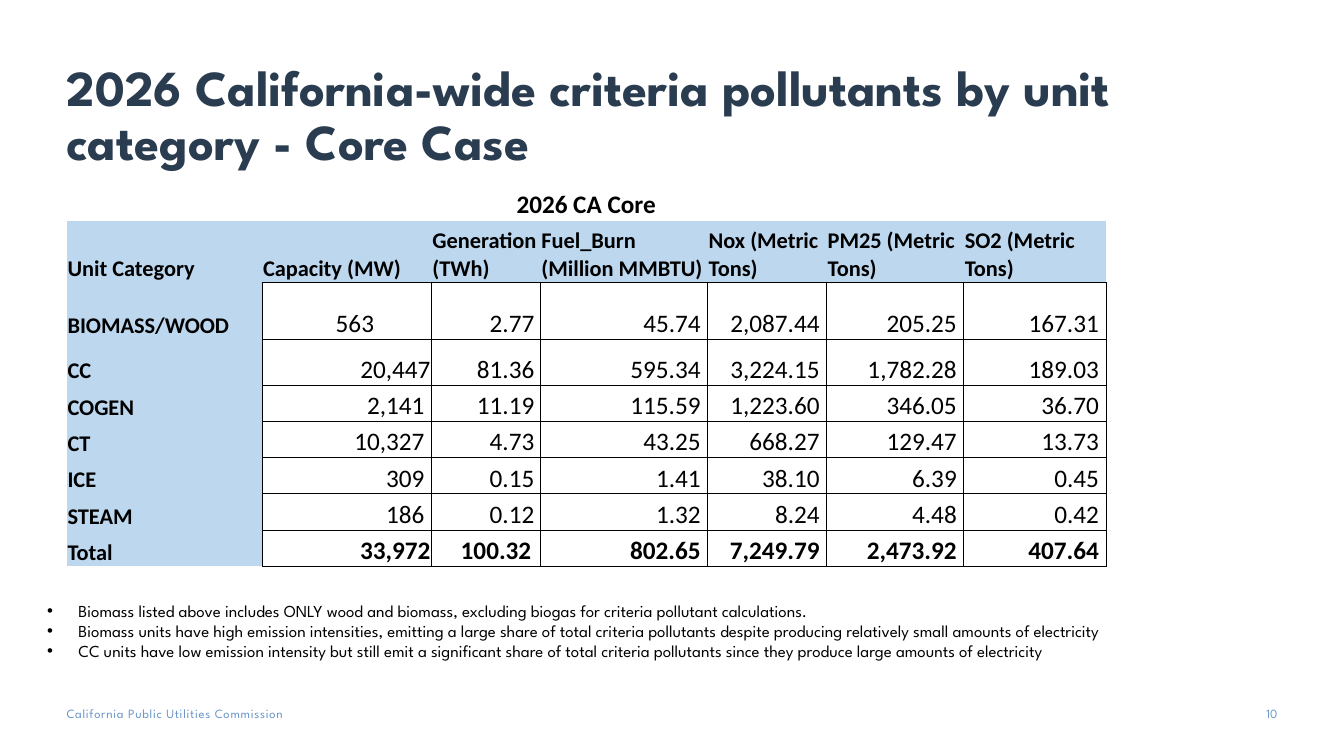
"""Build the slide on 2026 California-wide criteria pollutants by unit category."""
from dataclasses import dataclass

from lxml.etree import SubElement
from pptx import Presentation
from pptx.dml.color import RGBColor as Rgb
from pptx.enum.text import MSO_ANCHOR as Anchor, PP_ALIGN as Align
from pptx.oxml.ns import qn
from pptx.util import Inches, Pt

COLOURS = {"navy": "2A3C50", "steel": "6996C9", "black": "000000", "pale": "BDD7EE"}
HEADING_FONT, TABLE_FONT = "League Spartan", "Calibri"
COLUMN_WIDTHS = (1.94, 1.68, 1.08, 1.66, 1.18, 1.36, 1.41)
ROW_HEIGHTS = (0.34, 0.61, 0.57, 0.45) + (0.36,) * 5
EDGES = ("L", "R", "T", "B")
NUMBER_GAP = 0.07


@dataclass(frozen=True)
class Style:
    size: float
    colour: str = "black"
    font: str = HEADING_FONT
    bold: bool = False
    tracking: int = 0


@dataclass(frozen=True)
class TextBlock:
    left: float
    top: float
    width: float
    height: float
    lines: tuple[str, ...]
    style: Style
    insets: tuple[float, float, float, float] = (0, 0, 0, 0)
    align: Align = Align.LEFT
    anchor: Anchor = Anchor.TOP
    line_spacing: float = 1.0
    bulleted: bool = False


@dataclass(frozen=True)
class UnitRow:
    category: str
    values: tuple[str, ...]
    capacity_gap: float = NUMBER_GAP
    generation_gap: float = 0.06
    bold: bool = False


@dataclass(frozen=True)
class CellLook:
    style: Style
    align: Align = Align.LEFT
    gap: float = 0.01
    line_spacing: float = 1.0
    filled: bool = False
    edges: tuple[str, ...] = ()


BLOCKS = (
    TextBlock(0.66, 0.44, 12.01, 1.31,
              ("2026 California-wide criteria pollutants by unit category - Core Case",),
              Style(36, "navy", bold=True), (0, 0.05, 0.1, 0.05),
              anchor=Anchor.BOTTOM, line_spacing=0.9),
    TextBlock(0.37, 5.91, 12.01, 0.91, (
        "Biomass listed above includes ONLY wood and biomass, excluding biogas for criteria "
        "pollutant calculations.",
        "Biomass units have high emission intensities, emitting a large share of total criteria "
        "pollutants despite producing relatively small amounts of electricity",
        "CC units have low emission intensity but still emit a significant share of total criteria "
        "pollutants since they produce large amounts of electricity",
    ), Style(12), (0.1, 0.05, 0.1, 0.05), bulleted=True),
    TextBlock(0.66, 7, 3.21, 0.15, ("California Public Utilities Commission",),
              Style(9, "steel", tracking=50)),
    TextBlock(12.25, 7, 0.42, 0.2, ("10",), Style(9, "steel"), align=Align.RIGHT),
)

HEADERS = ("Unit Category", "Capacity (MW)", "Generation (TWh)", "Fuel_Burn (Million MMBTU)",
           "Nox (Metric Tons)", "PM25 (Metric Tons)", "SO2 (Metric Tons)")
UNITS = (
    UnitRow("BIOMASS/WOOD", ("563", "2.77", "45.74", "2,087.44", "205.25", "167.31"),
            capacity_gap=0.57),
    UnitRow("CC", ("20,447", "81.36", "595.34", "3,224.15", "1,782.28", "189.03"),
            capacity_gap=0.01),
    UnitRow("COGEN", ("2,141", "11.19", "115.59", "1,223.60", "346.05", "36.70")),
    UnitRow("CT", ("10,327", "4.73", "43.25", "668.27", "129.47", "13.73")),
    UnitRow("ICE", ("309", "0.15", "1.41", "38.10", "6.39", "0.45")),
    UnitRow("STEAM", ("186", "0.12", "1.32", "8.24", "4.48", "0.42")),
    UnitRow("Total", ("33,972", "100.32", "802.65", "7,249.79", "2,473.92", "407.64"),
            capacity_gap=0.01, generation_gap=0.09, bold=True),
)


def add_text(paragraph, text: str, style: Style) -> None:
    """Add one styled run to a paragraph."""
    run = paragraph.add_run()
    run.text = text
    run.font.size = Pt(style.size)
    run.font.name = style.font
    run.font.bold = style.bold
    run.font.color.rgb = Rgb.from_string(COLOURS[style.colour])
    if style.tracking:
        run.font._element.set("spc", str(style.tracking))


def add_bullet(paragraph) -> None:
    """Give a paragraph a hanging bullet."""
    properties = paragraph._p.get_or_add_pPr()
    properties.set("marL", str(Inches(0.31)))
    properties.set("indent", str(-Inches(0.31)))
    SubElement(properties, qn("a:buFont")).set("typeface", "Arial")
    SubElement(properties, qn("a:buChar")).set("char", "•")


def draw_block(slide, block: TextBlock) -> None:
    """Draw a text block with one paragraph for each line."""
    frame = slide.shapes.add_textbox(Inches(block.left), Inches(block.top),
                                     Inches(block.width), Inches(block.height)).text_frame
    frame.word_wrap = True
    frame.vertical_anchor = block.anchor
    (frame.margin_left, frame.margin_top,
     frame.margin_right, frame.margin_bottom) = map(Inches, block.insets)
    for index, line in enumerate(block.lines):
        paragraph = frame.add_paragraph() if index else frame.paragraphs[0]
        paragraph.alignment = block.align
        paragraph.line_spacing = block.line_spacing
        if block.bulleted:
            add_bullet(paragraph)
        add_text(paragraph, line, block.style)


def set_borders(cell, edges: tuple[str, ...]) -> None:
    """Rule the named edges of a cell and clear the others."""
    properties = cell._tc.get_or_add_tcPr()
    for edge in EDGES:
        border = SubElement(properties, qn(f"a:ln{edge}"))
        if edge in edges:
            border.set("w", str(Pt(0.5)))
            ink = SubElement(border, qn("a:solidFill"))
            SubElement(ink, qn("a:srgbClr")).set("val", COLOURS["black"])
        else:
            SubElement(border, qn("a:noFill"))


def fill_cell(cell, text: str, look: CellLook) -> None:
    """Write a table cell with its borders, fill and text."""
    set_borders(cell, look.edges)
    if look.filled:
        cell.fill.solid()
        cell.fill.fore_color.rgb = Rgb.from_string(COLOURS["pale"])
    else:
        cell.fill.background()
    cell.vertical_anchor = Anchor.BOTTOM
    cell.margin_left = cell.margin_top = Inches(0.01)
    cell.margin_right, cell.margin_bottom = Inches(look.gap), 0
    paragraph = cell.text_frame.paragraphs[0]
    paragraph.alignment = look.align
    paragraph.line_spacing = look.line_spacing
    add_text(paragraph, text, look.style)


def draw_table(slide) -> None:
    """Draw the emissions table."""
    table = slide.shapes.add_table(
        len(ROW_HEIGHTS), len(COLUMN_WIDTHS), Inches(0.66), Inches(1.85),
        Inches(sum(COLUMN_WIDTHS)), Inches(sum(ROW_HEIGHTS))).table
    table.first_row = table.horz_banding = False
    for column, width in zip(table.columns, COLUMN_WIDTHS):
        column.width = Inches(width)
    for row, height in zip(table.rows, ROW_HEIGHTS):
        row.height = Inches(height)

    label = Style(16, font=TABLE_FONT, bold=True)
    caption = table.cell(0, 0)
    caption.merge(table.cell(0, len(COLUMN_WIDTHS) - 1))
    fill_cell(caption, "2026 CA Core",
              CellLook(Style(18, font=TABLE_FONT, bold=True), Align.CENTER))
    for column, header in enumerate(HEADERS):
        fill_cell(table.cell(1, column), header,
                  CellLook(label, filled=True, edges=("B",) if column else ()))
    for row, unit in enumerate(UNITS, start=2):
        fill_cell(table.cell(row, 0), unit.category, CellLook(label, filled=True, edges=("R",)))
        gaps = {1: unit.capacity_gap, 2: unit.generation_gap}
        figure = Style(18, font=TABLE_FONT, bold=unit.bold)
        for column, value in enumerate(unit.values, start=1):
            fill_cell(table.cell(row, column), value,
                      CellLook(figure, Align.RIGHT, gaps.get(column, NUMBER_GAP),
                               1.0 if column == 1 else 1.15, edges=EDGES))


def main() -> None:
    """Build and save the presentation."""
    deck = Presentation()
    deck.slide_width, deck.slide_height = Inches(13.33), Inches(7.5)
    slide = deck.slides.add_slide(deck.slide_layouts[6])
    for block in BLOCKS:
        draw_block(slide, block)
    draw_table(slide)
    deck.save("out.pptx")


if __name__ == "__main__":
    main()
